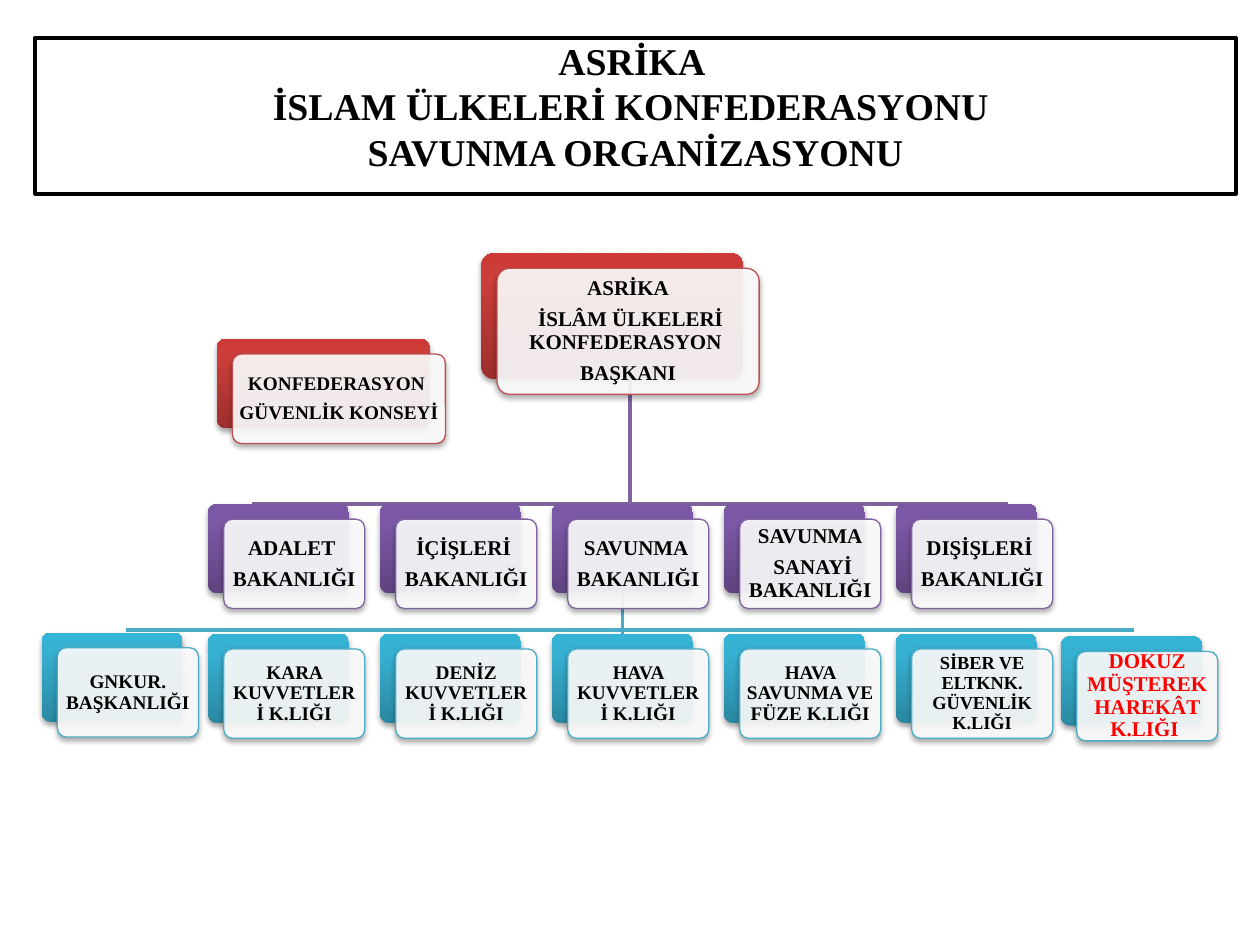
import pptx
import pptx.util
from lxml import etree
from pptx.dml.color import RGBColor
from pptx.enum.shapes import MSO_CONNECTOR, MSO_SHAPE
from pptx.enum.text import MSO_ANCHOR, PP_ALIGN
from pptx.oxml.ns import qn
from pptx.util import Inches

BLACK = RGBColor(0x00, 0x00, 0x00)
WHITE = RGBColor(0xFF, 0xFF, 0xFF)
ALERT = RGBColor(0xFF, 0x00, 0x00)
RED = RGBColor(0xC0, 0x50, 0x4D)
PURPLE = RGBColor(0x80, 0x64, 0xA2)
TEAL = RGBColor(0x4B, 0xAC, 0xC6)
# Gradient stops at 0, 80 and 100 percent, from the bottom up
GRADIENTS = {
    RED: [RGBColor(0x9C, 0x2F, 0x2D), RGBColor(0xCB, 0x3E, 0x3A), RGBColor(0xCE, 0x3B, 0x37)],
    PURPLE: [RGBColor(0x5F, 0x44, 0x80), RGBColor(0x7B, 0x58, 0xA6), RGBColor(0x7C, 0x57, 0xA8)],
    TEAL: [RGBColor(0x2A, 0x88, 0xA2), RGBColor(0x37, 0xB1, 0xD2), RGBColor(0x34, 0xB4, 0xD6)],
}
FONT = "Times New Roman"

# Content
TITLE = "ASRİKA \vİSLAM ÜLKELERİ KONFEDERASYONU \vSAVUNMA ORGANİZASYONU"
PRESIDENT = ["ASRİKA", " İSLÂM ÜLKELERİ KONFEDERASYON ", "BAŞKANI"]
COUNCIL = ["KONFEDERASYON ", "GÜVENLİK KONSEYİ"]
MINISTRIES = [
    ["ADALET ", "BAKANLIĞI"],
    ["İÇİŞLERİ ", "BAKANLIĞI"],
    ["SAVUNMA ", "BAKANLIĞI"],
    ["SAVUNMA", " SANAYİ BAKANLIĞI"],
    ["DIŞİŞLERİ ", "BAKANLIĞI"],
]
DEFENCE = 2  # the ministry that the commands belong to, and the command below it
# Text, size, colour
COMMANDS = [
    ("KARA KUVVETLERİ K.LIĞI", 11, BLACK),
    ("DENİZ KUVVETLERİ K.LIĞI", 11, BLACK),
    ("HAVA KUVVETLERİ K.LIĞI", 11, BLACK),
    ("HAVA SAVUNMA VE FÜZE K.LIĞI", 11, BLACK),
    ("SİBER VE ELTKNK. GÜVENLİK K.LIĞI", 10.5, BLACK),
]
# Text, size, colour, left, top
OUTER_COMMANDS = [
    ("GNKUR. BAŞKANLIĞI", 11, BLACK, 0.33, 5.02),
    ("DOKUZ MÜŞTEREK HAREKÂT K.LIĞI ", 12, ALERT, 8.42, 5.05),
]

# Layout, in inches
BOX_W, BOX_H = 1.12, 0.71
COLUMN_LEFT, COLUMN_STEP = 1.65, 1.365
MINISTRY_TOP, COMMAND_TOP = 4.0, 5.03
PRESIDENT_BOX = (3.82, 2.01, 2.08, 1.0)
COUNCIL_BOX = (1.72, 2.69, 1.69, BOX_H)
CARD_DX, CARD_DY = 0.125, 0.12
BUS_GAP = 0.105

presentation = pptx.Presentation()
presentation.slide_width, presentation.slide_height = Inches(10), Inches(7.5)
slide = presentation.slides.add_slide(presentation.slide_layouts[6])


def column_box(column, top):
    return COLUMN_LEFT + column * COLUMN_STEP, top, BOX_W, BOX_H


def add_color(parent, color, alpha=None):
    element = etree.SubElement(parent, qn("a:srgbClr"), val=str(color))
    if alpha:
        etree.SubElement(element, qn("a:alpha"), val=str(alpha * 1000))


def add_elbow(parent, child, color):
    """Line from the bottom middle of parent to the top middle of child."""
    start_x, start_y = parent[0] + parent[2] / 2, parent[1] + parent[3]
    end_x, end_y = child[0] + child[2] / 2, child[1]
    bus_y = end_y - BUS_GAP
    builder = slide.shapes.build_freeform(start_x, start_y, scale=Inches(1))
    builder.add_line_segments([(start_x, bus_y), (end_x, bus_y), (end_x, end_y)], close=False)
    shape = builder.convert_to_shape()
    shape.fill.background()
    shape.line.color.rgb = color
    shape.line.width = pptx.util.Pt(2)
    shape.shadow.inherit = False


def add_rounded(left, top, width, height):
    shape = slide.shapes.add_shape(MSO_SHAPE.ROUNDED_RECTANGLE, Inches(left), Inches(top),
                                   Inches(width), Inches(height))
    shape.adjustments[0] = 0.1
    shape.shadow.inherit = False
    effects = shape._element.spPr.find(qn("a:effectLst"))
    shadow = etree.SubElement(effects, qn("a:outerShdw"), blurRad="40000", dist="23000",
                              dir="5400000", rotWithShape="0")
    add_color(shadow, BLACK, 35)
    return shape


def add_gradient(shape, colors):
    shape.fill.gradient()
    shape.fill.gradient_angle = 90  # counter-clockwise: bottom to top
    stops = shape._element.spPr.find(qn("a:gradFill")).find(qn("a:gsLst"))
    for stop in list(stops):
        stops.remove(stop)
    for position, color in zip((0, 80, 100), colors):
        add_color(etree.SubElement(stops, qn("a:gs"), pos=str(position * 1000)), color)


def add_box(box, lines, accent, size=12, color=BLACK):
    """Coloured block with a translucent text card in front; returns the block."""
    left, top, width, height = box
    block = add_rounded(*box)
    add_gradient(block, GRADIENTS[accent])
    block.line.fill.background()

    card = add_rounded(left + CARD_DX, top + CARD_DY, width, height)
    card.fill.solid()
    card.fill.fore_color.rgb = WHITE
    white = card._element.spPr.find(qn("a:solidFill")).find(qn("a:srgbClr"))
    etree.SubElement(white, qn("a:alpha"), val="90000")
    card.line.color.rgb = accent
    card.line.width = pptx.util.Pt(0.75)

    frame = card.text_frame
    frame.word_wrap = True
    frame.vertical_anchor = MSO_ANCHOR.MIDDLE
    frame.margin_left = frame.margin_right = Inches(0.03)
    frame.margin_top = frame.margin_bottom = Inches(0.03)
    frame.text = "\n".join(lines)
    for paragraph in frame.paragraphs:
        paragraph.line_spacing = 0.9
        paragraph.space_after = pptx.util.Pt(round(size * 0.39, 1))
        style_paragraph(paragraph, size, color)
    return block


def style_paragraph(paragraph, size, color):
    paragraph.alignment = PP_ALIGN.CENTER
    paragraph.font.name = FONT
    paragraph.font.size = pptx.util.Pt(size)
    paragraph.font.bold = True
    paragraph.font.color.rgb = color


# Title
title = slide.shapes.add_shape(MSO_SHAPE.RECTANGLE, Inches(0.28), Inches(0.3),
                               Inches(9.53), Inches(1.24))
title.shadow.inherit = False
title.fill.solid()
title.fill.fore_color.rgb = WHITE
title.line.color.rgb = BLACK
title.line.width = pptx.util.Pt(2)
title.text_frame.word_wrap = True
title.text_frame.vertical_anchor = MSO_ANCHOR.TOP
title.text_frame.margin_top = 0
title.text_frame.text = TITLE
title_paragraph = title.text_frame.paragraphs[0]
title_paragraph.line_spacing = pptx.util.Pt(25.9)
style_paragraph(title_paragraph, 21.6, BLACK)

# Lines, behind the boxes
ministry_boxes = [column_box(i, MINISTRY_TOP) for i in range(len(MINISTRIES))]
command_boxes = [column_box(i, COMMAND_TOP) for i in range(len(COMMANDS))]
outer_boxes = [(left, top, BOX_W, BOX_H) for *_, left, top in OUTER_COMMANDS]
for box in ministry_boxes:
    add_elbow(PRESIDENT_BOX, box, PURPLE)
for box in command_boxes[:DEFENCE] + command_boxes[DEFENCE + 1:] + outer_boxes:
    add_elbow(ministry_boxes[DEFENCE], box, TEAL)
straight = slide.shapes.add_connector(MSO_CONNECTOR.STRAIGHT, 0, 0, 0, 0)
straight.line.color.rgb = TEAL
straight.line.width = pptx.util.Pt(2)
etree.SubElement(straight._element.spPr, qn("a:effectLst"))

# Boxes
add_box(PRESIDENT_BOX, PRESIDENT, RED)
add_box(COUNCIL_BOX, COUNCIL, RED, 11)
ministries = [add_box(box, lines, PURPLE) for box, lines in zip(ministry_boxes, MINISTRIES)]
commands = [add_box(box, [text], TEAL, size, color)
            for box, (text, size, color) in zip(command_boxes, COMMANDS)]
for box, (text, size, color, *_) in zip(outer_boxes, OUTER_COMMANDS):
    add_box(box, [text], TEAL, size, color)
straight.begin_connect(ministries[DEFENCE], 2)
straight.end_connect(commands[DEFENCE], 0)

presentation.save("out.pptx")
